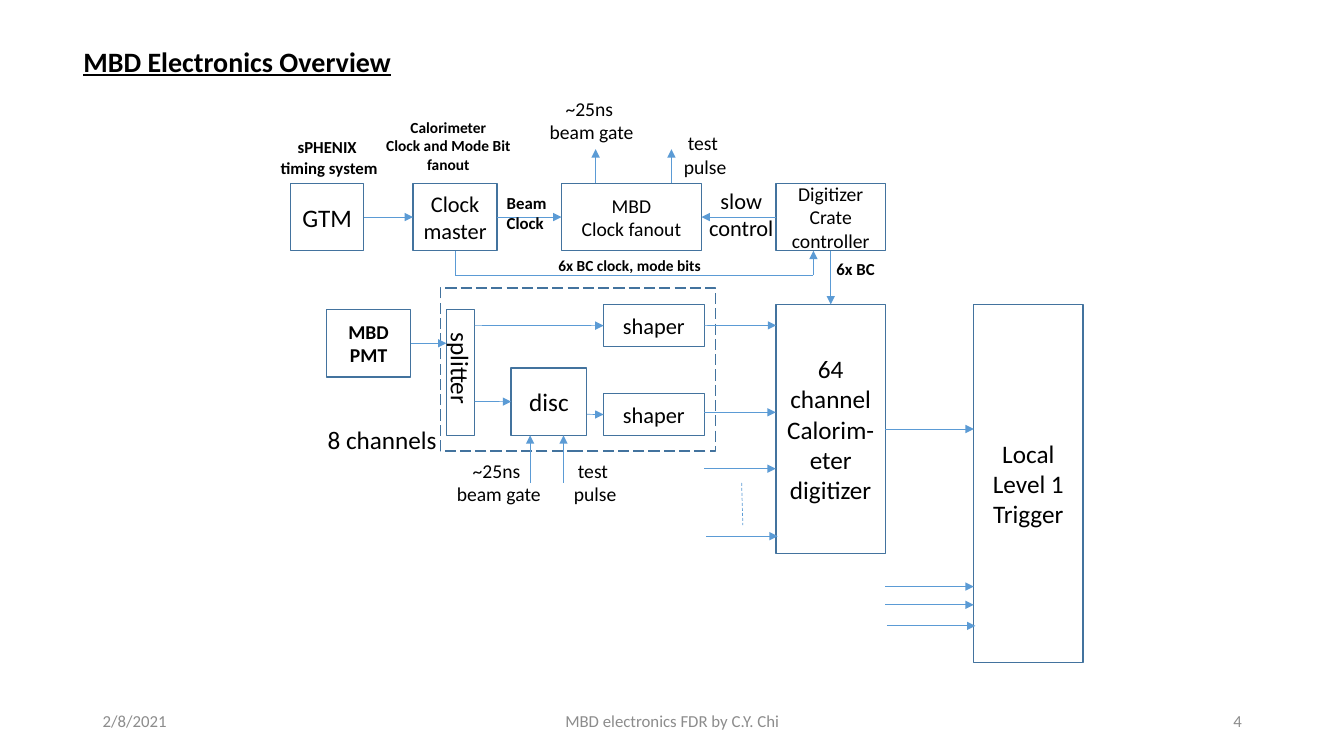
from lxml.etree import SubElement
from pptx import Presentation
from pptx.dml.color import RGBColor
from pptx.enum.dml import MSO_LINE
from pptx.enum.shapes import MSO_CONNECTOR, MSO_SHAPE
from pptx.enum.text import MSO_ANCHOR, PP_ALIGN
from pptx.oxml.ns import qn
from pptx.util import Cm, Pt

TOP, LEFT, BOTTOM, RIGHT = range(4)


def color(code):
    return RGBColor.from_string(code)


class Board:
    """Draws styled boxes, labels and wires on one slide."""

    font = "Calibri"
    ink, edge, blue, gray = "000000", "43739E", "5B9BD5", "8C8C8C"

    def __init__(self, slide):
        self.shapes = slide.shapes

    def fill_in(self, frame, text, size, bold=False, under=False, tint=ink, align=PP_ALIGN.CENTER):
        for i, line in enumerate(text.split("\n")):
            para = frame.paragraphs[0] if i == 0 else frame.add_paragraph()
            para.alignment = align
            for j, part in enumerate(line.split("\v")):
                if j:
                    para.add_line_break()
                run = para.add_run()
                run.text = part
                run.font.name = self.font
                run.font.size = Pt(size)
                run.font.bold = bold
                run.font.underline = under
                run.font.color.rgb = color(tint)

    def box(self, x, y, w, h, text="", size=18, bold=False, dash=None):
        shape = self.shapes.add_shape(MSO_SHAPE.RECTANGLE, Cm(x), Cm(y), Cm(w), Cm(h))
        shape.shadow.inherit = False
        shape.fill.background()
        shape.line.color.rgb = color(self.edge)
        shape.line.width = Pt(1)
        if dash:
            shape.line.dash_style = dash
        frame = shape.text_frame
        frame.word_wrap = True
        frame.vertical_anchor = MSO_ANCHOR.MIDDLE
        if text:
            self.fill_in(frame, text, size, bold)
        return shape

    def label(self, x, y, w, h, text, size, turn=0, wrap=False, **style):
        shape = self.shapes.add_textbox(Cm(x), Cm(y), Cm(w), Cm(h))
        shape.rotation = turn
        shape.text_frame.word_wrap = wrap
        if wrap:
            shape.text_frame.vertical_anchor = MSO_ANCHOR.MIDDLE
        self.fill_in(shape.text_frame, text, size, **style)

    def wire(self, x1, y1, x2, y2, start=None, end=None, tip=True, dash=None):
        line = self.shapes.add_connector(MSO_CONNECTOR.STRAIGHT, Cm(x1), Cm(y1), Cm(x2), Cm(y2))
        line.line.color.rgb = color(self.blue)
        line.line.width = Pt(0.5)
        if dash:
            line.line.dash_style = dash
        if start:
            line.begin_connect(*start)
        if end:
            line.end_connect(*end)
        props = line._element.spPr
        if tip:
            SubElement(props.find(qn("a:ln")), qn("a:tailEnd"), type="triangle")
        SubElement(props, qn("a:effectLst"))


def draw(board):
    row, high = 4.62, 1.7
    mid, base = row + high / 2, row + high
    gtm = board.box(7.32, row, 1.85, high, "GTM")
    clock = board.box(10.41, row, 2.12, high, "Clock\nmaster", 16)
    fan = board.box(14.15, row, 3.53, high, "MBD\nClock fanout", 14)
    crate = board.box(19.56, row, 2.75, high, "Digitizer\nCrate controller", 14)
    pmt = board.box(8.23, 7.8, 2.12, high, "MBD\nPMT", 14, True)
    board.box(11.25, 7.8, 0.71, 3.18)
    disc = board.box(12.88, 9.27, 1.91, high, "disc")
    shaper1, shaper2 = [board.box(15.21, y, 2.54, 1.07, "shaper", 16) for y in (7.67, 9.91)]
    digit = board.box(19.56, 7.67, 2.75, 6.28, "64 channel\vCalorim-eter digitizer")
    board.box(24.54, 7.67, 2.75, 9.02, "Local\nLevel 1\nTrigger")
    board.box(11.1, 7.26, 6.93, 4.11, dash=MSO_LINE.LONG_DASH)

    board.wire(9.17, mid, 10.41, mid, (gtm, RIGHT), (clock, LEFT))
    board.wire(12.53, mid, 14.15, mid, (clock, RIGHT), (fan, LEFT))
    board.wire(19.56, mid, 17.68, mid, (crate, LEFT), (fan, RIGHT))
    board.wire(20.93, base, 20.93, 7.67, (crate, BOTTOM), (digit, TOP))
    board.wire(11.47, base, 11.47, 6.93, (clock, BOTTOM), tip=False)
    board.wire(11.47, 6.93, 20.5, 6.93, tip=False)
    board.wire(20.5, 6.93, 20.5, base)
    for x in (15.01, 16.92):
        board.wire(x, row, x, 3.76)
    for x in (13.36, 14.2):
        board.wire(x, 12.17, x, 10.97)

    board.wire(10.35, 8.65, 11.25, 8.65, start=(pmt, RIGHT))
    board.wire(11.96, 8.2, 15.21, 8.2, end=(shaper1, LEFT))
    board.wire(11.96, 10.12, 12.88, 10.12, end=(disc, LEFT))
    board.wire(14.79, 10.44, 15.21, 10.44, end=(shaper2, LEFT))
    board.wire(17.75, 8.2, 19.56, 8.2, start=(shaper1, RIGHT))
    for x, y in ((17.75, 10.39), (17.75, 11.81), (17.8, 13.51)):
        board.wire(x, y, x + 1.8, y)
    board.wire(22.31, 10.81, 24.54, 10.81, start=(digit, RIGHT))
    for x, y in ((22.31, 14.78), (22.31, 15.24), (22.35, 15.77)):
        board.wire(x, y, x + 2.23, y)
    board.wire(18.69, 12.17, 18.72, 13.23, tip=False, dash=MSO_LINE.DASH)

    for x, y in ((13.59, 2.31), (11.25, 11.43)):
        board.label(x, y, 2.64, 1.45, "~25ns \nbeam gate", 14)
    for x, y in ((16.97, 3.18), (14.2, 11.43)):
        board.label(x, y, 1.6, 1.45, "test \npulse", 14)
    left = PP_ALIGN.LEFT
    board.label(10.44, 8.79, 2.34, 1.02, "splitter", 18, turn=90, align=left)
    board.label(13.82, 6.32, 4.14, 0.74, "6x BC clock, mode bits", 11, bold=True, align=left)
    board.label(17.6, 4.6, 2.16, 1.63, "slow\ncontrol", 16)
    board.label(20.83, 6.4, 1.5, 0.76, "6x BC", 12, bold=True, align=left)
    board.label(7.98, 10.57, 3.3, 1.02, "8 channels", 18)
    board.label(6.81, 3.33, 2.97, 1.27, "sPHENIX \ntiming system", 12, bold=True)
    board.label(9.47, 2.84, 3.66, 1.68, "Calorimeter\nClock and Mode Bit\nfanout", 11, bold=True)
    board.label(12.52, 4.72, 1.52, 1.27, "Beam\nClock", 12, bold=True, align=left)
    board.label(1.85, 0.99, 8.33, 1.12, "MBD Electronics Overview", 20,
                bold=True, under=True, align=left)
    for x, w, text, align in (
        (2.34, 7.62, "2/8/2021", left),
        (11.23, 11.43, "MBD electronics FDR by C.Y. Chi", PP_ALIGN.CENTER),
        (23.93, 7.62, "4", PP_ALIGN.RIGHT),
    ):
        board.label(x, 17.65, w, 1.02, text, 12, wrap=True, tint=board.gray, align=align)


def main():
    deck = Presentation()
    deck.slide_width, deck.slide_height = Cm(33.87), Cm(19.05)
    draw(Board(deck.slides.add_slide(deck.slide_layouts[6])))
    deck.save("out.pptx")


if __name__ == "__main__":
    main()
